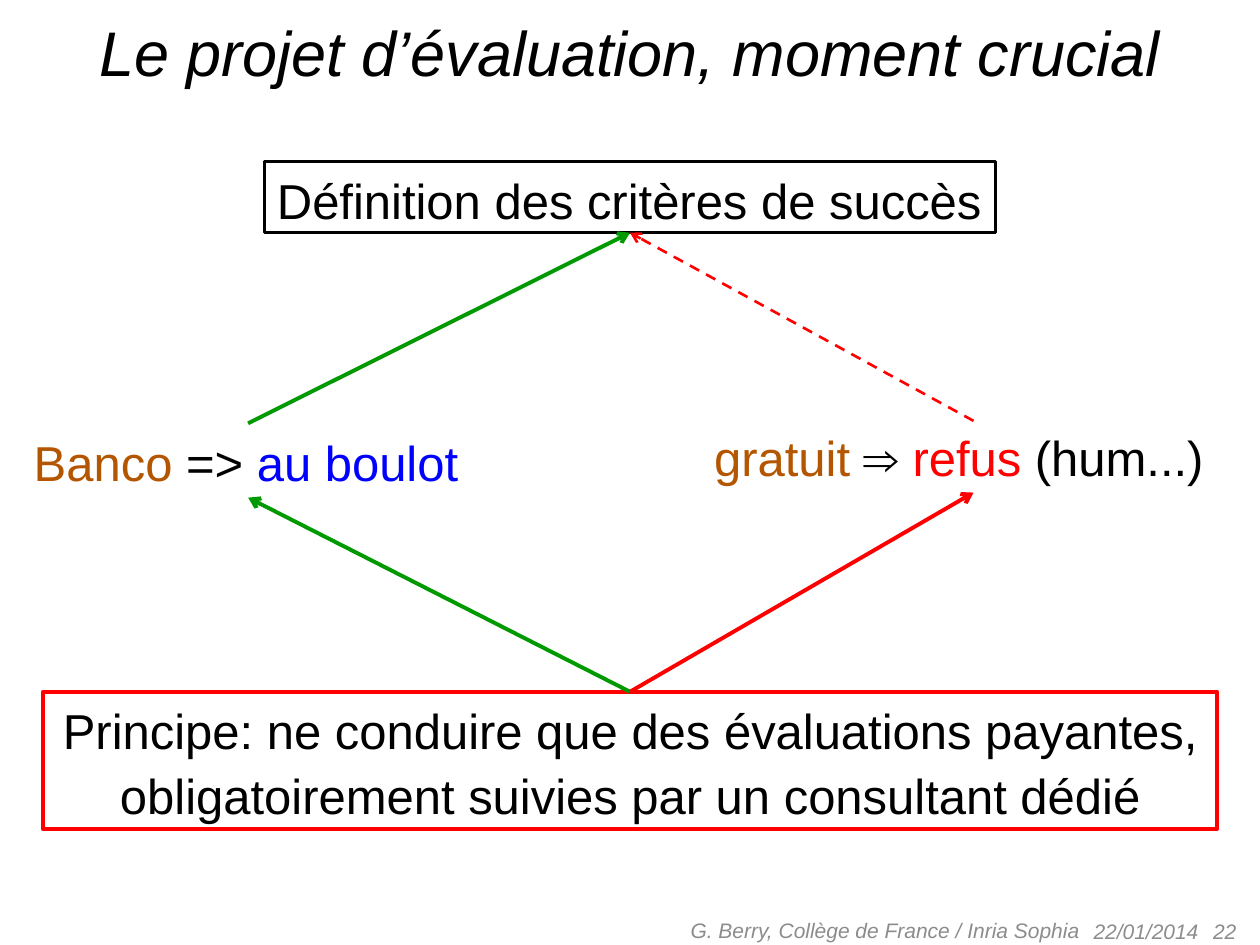
from lxml import etree
from pptx import Presentation
from pptx.dml.color import RGBColor
from pptx.enum.dml import MSO_LINE
from pptx.enum.shapes import MSO_CONNECTOR, MSO_SHAPE
from pptx.enum.text import MSO_ANCHOR, PP_ALIGN
from pptx.oxml.ns import qn
from pptx.util import Pt

BLACK = RGBColor(0x00, 0x00, 0x00)
GREY = RGBColor(0x8C, 0x8C, 0x8C)
RED = RGBColor(0xFF, 0x00, 0x00)
GREEN = RGBColor(0x00, 0x9A, 0x00)
BLUE = RGBColor(0x00, 0x00, 0xFF)
BROWN = RGBColor(0xB4, 0x56, 0x00)
LEFT, CENTER, RIGHT = PP_ALIGN.LEFT, PP_ALIGN.CENTER, PP_ALIGN.RIGHT
TOP, MIDDLE, BOTTOM = MSO_ANCHOR.TOP, MSO_ANCHOR.MIDDLE, MSO_ANCHOR.BOTTOM
RECTANGLE, STRAIGHT, DASH = MSO_SHAPE.RECTANGLE, MSO_CONNECTOR.STRAIGHT, MSO_LINE.DASH

prs = Presentation()
prs.slide_width, prs.slide_height = Pt(720), Pt(540)
slide = prs.slides.add_slide(prs.slide_layouts[6])


def add_text(lines, box, size=28, align=LEFT, anchor=TOP, italic=False, wrap=False,
             spacing=None, before=0, border=None, border_width=1.5, inset_right=7.2):
    """Each line is a list of (text, colour) or (text, colour, bold) runs."""
    place = [Pt(v) for v in box]
    if border is None:
        shape = slide.shapes.add_textbox(*place)
    else:
        shape = slide.shapes.add_shape(RECTANGLE, *place)
        shape.shadow.inherit = False
        shape.fill.background()
        shape.line.color.rgb = border
        shape.line.width = Pt(border_width)
    frame = shape.text_frame
    frame.word_wrap = wrap
    frame.vertical_anchor = anchor
    frame.margin_right = Pt(inset_right)
    for i, line in enumerate(lines):
        paragraph = frame.add_paragraph() if i else frame.paragraphs[0]
        paragraph.alignment = align
        paragraph.space_before = Pt(before)
        if spacing:
            paragraph.line_spacing = spacing
        for text, color, *bold in line:
            run = paragraph.add_run()
            run.text = text
            run.font.name, run.font.size = "Arial", Pt(size)
            run.font.color.rgb = color
            run.font.italic, run.font.bold = italic, bool(bold)


# Footer: date, slide number, author
for text, box, align in [
    ("22/01/2014", (617.8, 517.7, 167.8, 28.8), LEFT),
    ("22", (545.8, 517.7, 167.8, 28.8), RIGHT),
    ("G. Berry, Collège de France / Inria Sophia", (331.9, 517, 292.3, 28.8), RIGHT),
]:
    add_text([[(text, GREY)]], box, size=12, align=align, anchor=MIDDLE,
             italic=True, wrap=True)

# Title
add_text([[("Le projet d’évaluation, moment crucial", BLACK)]], (18, 3.6, 684, 51.1),
         size=36, align=CENTER, anchor=BOTTOM, italic=True, wrap=True)

# Principle, the two answers, and the success criteria
add_text([[("Principe: ne conduire que des évaluations payantes,", BLACK)],
          [("obligatoirement suivies par un consultant dédié", BLACK)]],
         (24.5, 395.3, 671, 78.5), align=CENTER, spacing=1.05, before=1.5,
         border=RED, border_width=2.25)
add_text([[("Banco ", BROWN), ("=> ", BLACK), ("au boulot", BLUE)]],
         (12.2, 241.9, 259.9, 43.2), spacing=1.05, before=1.5)
add_text([[("gratuit ", BROWN), ("⇒ ", BLACK, True), ("refus ", RED), ("(hum...)", BLACK)]],
         (401, 240.5, 310.3, 41), before=1.5)
add_text([[("Définition des critères de succès", BLACK)]],
         (151.2, 92.2, 417.6, 40.6), spacing=1.05, before=1.5,
         border=BLACK, inset_right=2.9)

# Arrows from the principle to each answer, then on to the criteria
principle, criteria = (360, 395.3), (360, 133)
accept_x, refuse_x = 141.8, 556.3
for start, end, color, width, dash in [
    (principle, (accept_x, 284.4), GREEN, 2.25, None),
    (principle, (refuse_x, 281.5), RED, 2.25, None),
    ((accept_x, 241.9), criteria, GREEN, 2.25, None),
    ((refuse_x, 240.5), criteria, RED, 1.5, DASH),
]:
    arrow = slide.shapes.add_connector(STRAIGHT, *[Pt(v) for v in start + end])
    arrow.line.color.rgb = color
    arrow.line.width = Pt(width)
    if dash:
        arrow.line.dash_style = dash
    etree.SubElement(arrow.line._get_or_add_ln(), qn("a:tailEnd"), type="arrow")
    etree.SubElement(arrow._element.spPr, qn("a:effectLst"))

prs.save("out.pptx")
